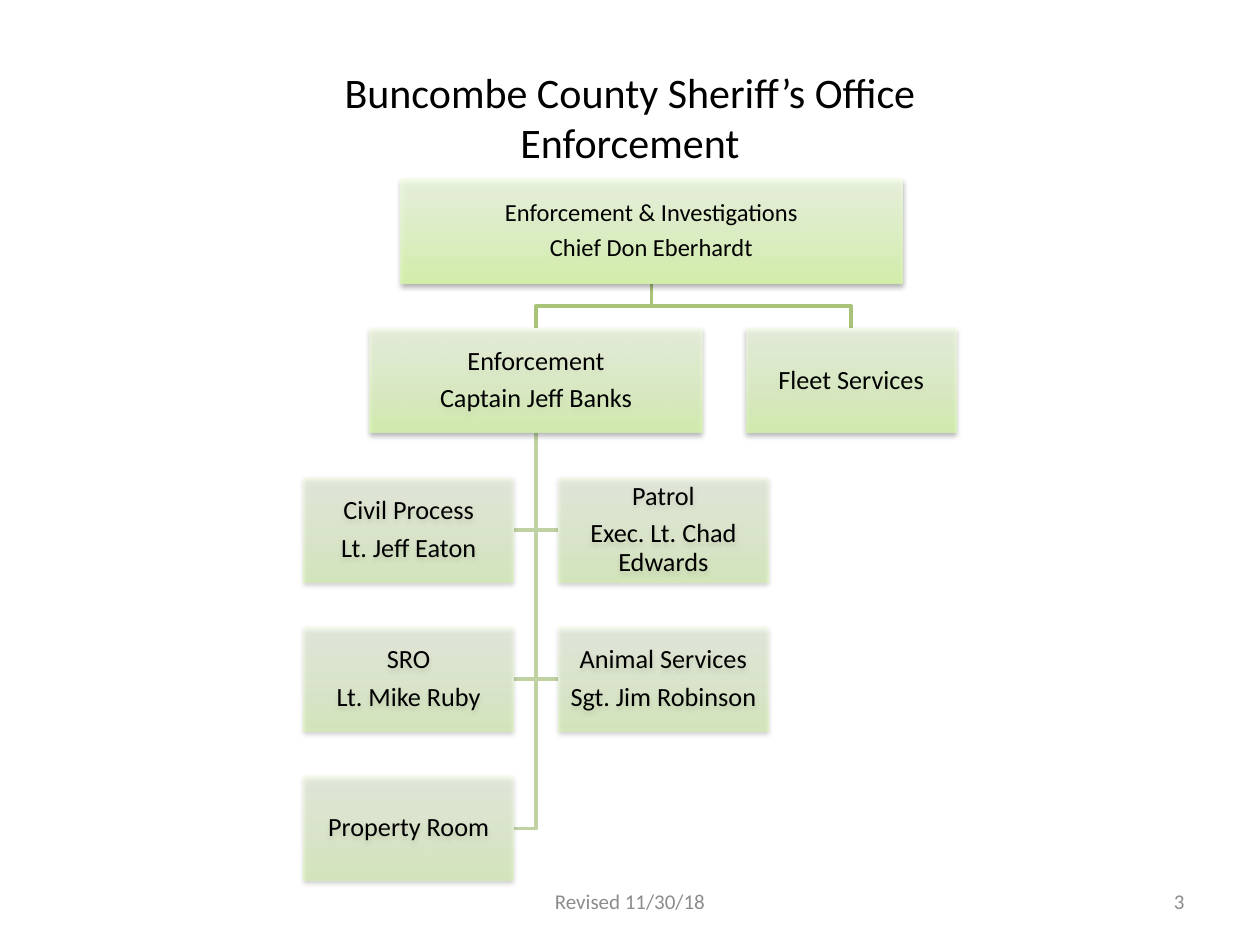
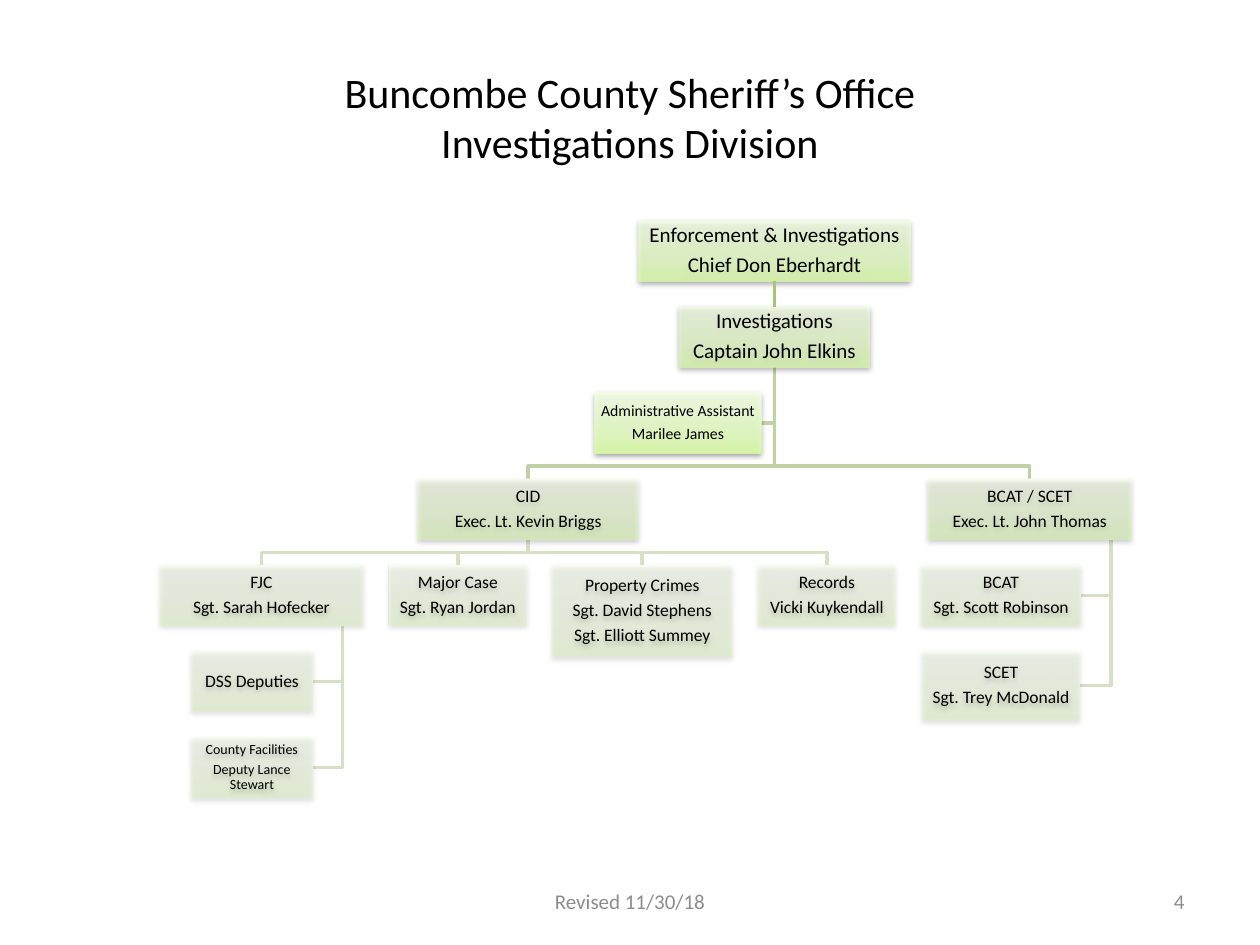
from dataclasses import dataclass, field

from pptx import Presentation
from pptx.dml.color import RGBColor as RGB
from pptx.enum.shapes import MSO_CONNECTOR as CONN, MSO_SHAPE as SHAPE
from pptx.enum.text import MSO_ANCHOR as ANCHOR, PP_ALIGN as ALIGN
from pptx.oxml import parse_xml
from pptx.oxml.ns import nsdecls
from pptx.util import Pt


@dataclass(frozen=True)
class Theme:
    """Fonts, type sizes, colours and weights shared by the slides."""
    font: str = "Calibri"
    title_size: float = 24
    footer_size: float = 12
    ink: str = "000000"
    muted: str = "8C8C8C"
    line_width: float = 2
    inset: float = 0.72
    gradient: tuple = ((0, "DAFDA7"), (35, "E4FCC2"), (100, "F5FFE7"))
    opacity: dict = field(default_factory=lambda: {
        "chief": 80, "captain": 70, "lieutenant": 50, "team": 30, "aide": 90})
    link: dict = field(default_factory=lambda: {
        "captain": "A9C379", "lieutenant": "C0D2A4", "team": "D5E0C4", "aide": "C0D2A4"})


@dataclass
class Unit:
    """A box of the chart; hang is the trunk's place along the parent's width."""
    text: str
    row: int
    cx: float
    w: float
    rank: str
    size: float
    parent: str = None
    hang: float = None
    h: float = None

    @property
    def name(self):
        """Return the first line, which identifies the unit."""
        return self.text.split("\n")[0]


@dataclass
class Grid:
    """Box origin and row measures of a chart."""
    left: float
    top: float
    pitch: float
    height: float

    def rect(self, u):
        """Return the left, top, width and height of a unit on the slide."""
        return (self.left + u.cx - u.w / 2, self.top + u.row * self.pitch,
                u.w, u.h or self.height)


T = Theme()
TITLE_BOX = (36, 21.6, 648, 90)
FOOTER_BOX = (246, 500.4, 228, 28.8)
NUMBER_BOX = (516, 500.4, 168, 28.8)

ENFORCEMENT = [
    Unit("Enforcement & Investigations\nChief Don Eberhardt", 0, 198.7, 286.6, "chief", 14),
    Unit("Enforcement\nCaptain Jeff Banks", 1, 132.8, 190, "captain", 15,
         "Enforcement & Investigations"),
    Unit("Fleet Services", 1, 312.9, 120, "captain", 15, "Enforcement & Investigations"),
] + [
    Unit(text, row, cx, 120, "lieutenant", 15, "Enforcement", 0.5)
    for text, row, cx in (
        ("Civil Process\nLt. Jeff Eaton", 2, 60),
        ("Patrol\nExec. Lt. Chad Edwards", 2, 205.6),
        ("SRO\nLt. Mike Ruby", 3, 60),
        ("Animal Services\nSgt. Jim Robinson", 3, 205.6),
        ("Property Room", 4, 60))
]

INVESTIGATIONS = [
    Unit("Enforcement & Investigations\nChief Don Eberhardt", 0, 351.2, 154.8, "chief", 12),
    Unit("Investigations\nCaptain John Elkins", 1, 351.2, 108.8, "captain", 12,
         "Enforcement & Investigations"),
    Unit("Administrative Assistant\nMarilee James", 2, 296, 95.2, "aide", 9,
         "Investigations", 0.5),
    Unit("CID\nExec. Lt. Kevin Briggs", 3, 210.4, 126, "lieutenant", 10, "Investigations"),
    Unit("BCAT / SCET\nExec. Lt. John Thomas", 3, 497, 116, "lieutenant", 10,
         "Investigations"),
    Unit("FJC\nSgt. Sarah Hofecker", 4, 58, 116, "team", 10, "CID"),
    Unit("Major Case\nSgt. Ryan Jordan", 4, 170.2, 79, "team", 10, "CID"),
    Unit("Property Crimes\nSgt. David Stephens\nSgt. Elliott Summey", 4, 275.6, 103,
         "team", 10, "CID", h=52.6),
    Unit("Records\nVicki Kuykendall", 4, 381.1, 78.6, "team", 10, "CID"),
    Unit("DSS Deputies", 5, 52.6, 69.4, "team", 10, "FJC", 0.9),
    Unit("County Facilities\nDeputy Lance Stewart", 6, 52.6, 69.4, "team", 8, "FJC", 0.9),
    Unit("BCAT\nSgt. Scott Robinson", 4, 480.6, 91.4, "team", 10, "BCAT / SCET", 0.9),
    Unit("SCET\nSgt. Trey McDonald", 5, 480.6, 90, "team", 10, "BCAT / SCET", 0.9, 39.6),
]


def pts(*values):
    """Convert numbers to point lengths."""
    return [Pt(v) for v in values]


def assign(obj, **formats):
    """Set each named format on an object."""
    for key, value in formats.items():
        setattr(obj, key, value)


def write(sp, text, size, color=T.ink, align=ALIGN.CENTER, **para):
    """Fill a shape with one centred-in-height paragraph per line."""
    tf = sp.text_frame
    assign(tf, word_wrap=True, vertical_anchor=ANCHOR.MIDDLE)
    for i, line in enumerate(text.split("\n")):
        p = tf.add_paragraph() if i else tf.paragraphs[0]
        p.text = line
        assign(p, alignment=align, **para)
        for r in p.runs:
            assign(r.font, name=T.font, size=Pt(size))
            r.font.color.rgb = RGB.from_string(color)


def add_label(s, box, text, size, **formats):
    """Add a text box."""
    write(s.shapes.add_textbox(*pts(*box)), text, size, **formats)


def add_frame(s, title, number):
    """Add the title, revision footer and slide number."""
    add_label(s, TITLE_BOX, title, T.title_size)
    add_label(s, FOOTER_BOX, "Revised 11/30/18", T.footer_size, color=T.muted)
    add_label(s, NUMBER_BOX, str(number), T.footer_size, color=T.muted, align=ALIGN.RIGHT)


def style_line(sp, rank):
    """Give a link the weight and colour of the rank it leads to."""
    sp.line.width = Pt(T.line_width)
    sp.line.color.rgb = RGB.from_string(T.link[rank])


def add_unit(s, grid, u):
    """Add a translucent gradient box with a soft shadow and its text."""
    sp = s.shapes.add_shape(SHAPE.RECTANGLE, *pts(*grid.rect(u)))
    sp.line.fill.background()
    stops = "".join(
        f'<a:gs pos="{pos * 1000}"><a:srgbClr val="{color}">'
        f'<a:alpha val="{T.opacity[u.rank] * 1000}"/></a:srgbClr></a:gs>'
        for pos, color in T.gradient)
    props = sp.element.spPr
    props.insert(2, parse_xml(
        f'<a:gradFill {nsdecls("a")} rotWithShape="1"><a:gsLst>{stops}</a:gsLst>'
        '<a:lin ang="16200000" scaled="0"/></a:gradFill>'))
    props.append(parse_xml(
        f'<a:effectLst {nsdecls("a")}><a:outerShdw blurRad="{Pt(3.1)}" dist="{Pt(1.6)}" '
        'dir="5400000" rotWithShape="0"><a:srgbClr val="000000"><a:alpha val="38000"/>'
        '</a:srgbClr></a:outerShdw></a:effectLst>'))
    inset = Pt(T.inset)
    assign(sp.text_frame, margin_left=inset, margin_right=inset,
           margin_top=inset, margin_bottom=inset)
    write(sp, u.text, u.size, line_spacing=0.9, space_after=Pt(0.35 * u.size))
    return sp


def add_link(s, grid, parent, u):
    """Add a bent link from a parent to a unit's top or facing side."""
    px, py, pw, ph = grid.rect(parent)
    x, y, w, h = grid.rect(u)
    trunk = px + pw * (u.hang or 0.5)
    if u.hang:
        mid = y + h / 2
        side = x + w if x + w < trunk else x
        bends = [(trunk, mid), (side, mid)]
    else:
        bus = y - (grid.pitch - grid.height) / 2
        bends = [(trunk, bus), (x + w / 2, bus), (x + w / 2, y)]
    path = s.shapes.build_freeform(*pts(trunk, py + ph), scale=1.0)
    path.add_line_segments([pts(*bend) for bend in bends], close=False)
    sp = path.convert_to_shape()
    sp.fill.background()
    sp.shadow.inherit = False
    style_line(sp, u.rank)


def add_straight_link(s, upper, lower, rank):
    """Join the bottom of one box to the top of the next."""
    c = s.shapes.add_connector(CONN.STRAIGHT, 0, 0, 0, 0)
    c.begin_connect(upper, 2)
    c.end_connect(lower, 0)
    style_line(c, rank)
    c.element.spPr.append(parse_xml(f'<a:effectLst {nsdecls("a")}/>'))


def add_chart_tree(s, grid, units):
    """Add the links and boxes of an organisation chart."""
    by_name = {u.name: u for u in units}
    children = [u for u in units if u.parent]
    straight = [u for u in children if u.cx == by_name[u.parent].cx]
    for u in children:
        if u not in straight:
            add_link(s, grid, by_name[u.parent], u)
    boxes = {u.name: add_unit(s, grid, u) for u in units}
    for u in straight:
        add_straight_link(s, boxes[u.parent], boxes[u.name], u.rank)


def main():
    """Build and save the presentation."""
    prs = Presentation()
    assign(prs, slide_width=Pt(720), slide_height=Pt(540))
    slides = (
        ("Enforcement", Grid(173.5, 102.3, 85.3, 59.8), ENFORCEMENT),
        ("Investigations Division", Grid(91.4, 126, 49.2, 34.8), INVESTIGATIONS),
    )
    for number, (division, grid, units) in enumerate(slides, 3):
        s = prs.slides.add_slide(prs.slide_layouts[6])
        add_frame(s, f"Buncombe County Sheriff’s Office\v{division}", number)
        add_chart_tree(s, grid, units)
    prs.save("out.pptx")


if __name__ == "__main__":
    main()
